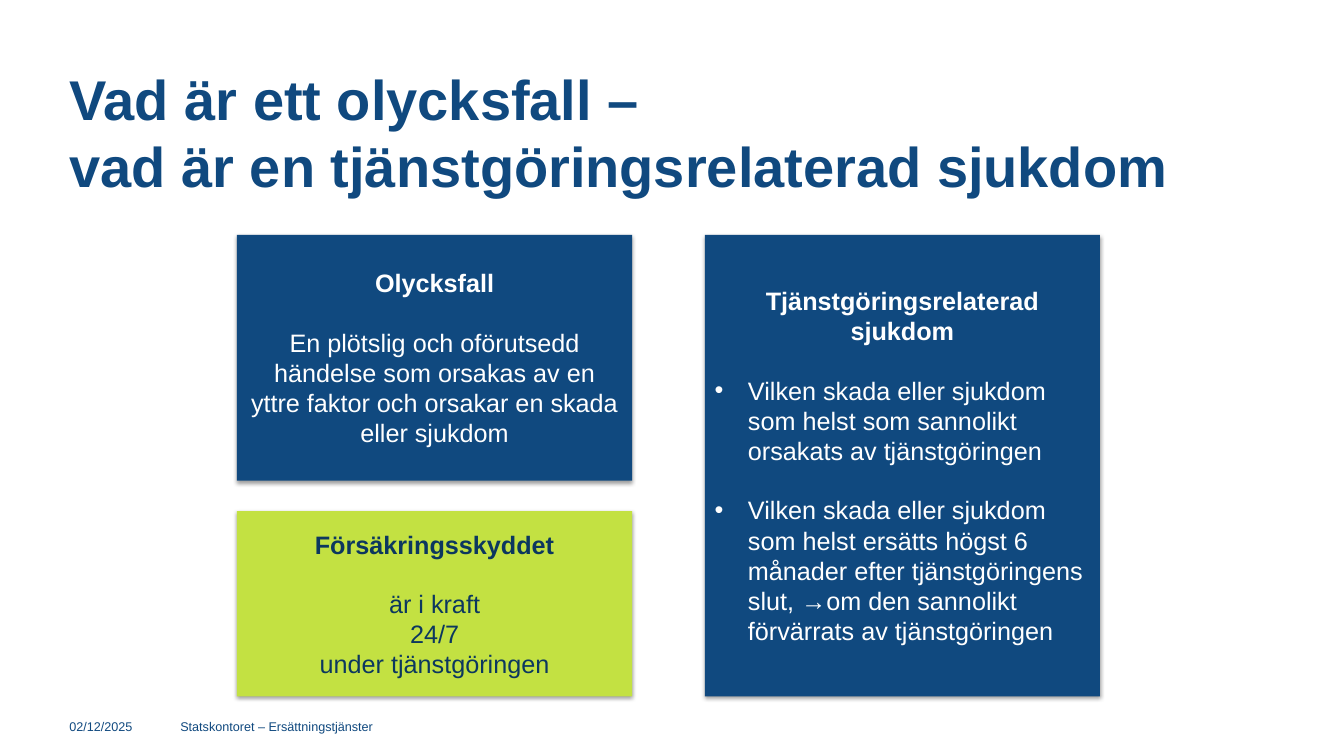
from lxml.etree import SubElement
from pptx import Presentation
from pptx.dml.color import RGBColor
from pptx.enum.shapes import MSO_SHAPE
from pptx.enum.text import MSO_ANCHOR, MSO_AUTO_SIZE, PP_ALIGN
from pptx.oxml.ns import qn
from pptx.util import Inches, Pt

BLUE = RGBColor(0x10, 0x49, 0x7F)
NAVY = RGBColor(0x0C, 0x37, 0x5F)
LIME = RGBColor(0xC3, 0xE1, 0x42)
WHITE = RGBColor(0xFF, 0xFF, 0xFF)

MARGIN = 0.59
CARD_LEFT, CARD_TOP = 2.35, 2.33
CARD_WIDTH, COLUMN_GAP = 3.92, 0.72
UPPER_HEIGHT, LOWER_HEIGHT, ROW_GAP = 2.44, 1.84, 0.3
FULL_HEIGHT = UPPER_HEIGHT + ROW_GAP + LOWER_HEIGHT
FOOTER_TOP, FOOTER_HEIGHT = 7.01, 0.39
CARD_TEXT_SIZE = 18
BLANK_LINE = Pt(20.7)


def format_paragraph(paragraph, size, color, bold=False, alignment=PP_ALIGN.LEFT):
    """Set the alignment and the font of every run in a paragraph."""
    paragraph.alignment = alignment
    for run in paragraph.runs:
        run.font.name = "Arial"
        run.font.size = Pt(size)
        run.font.bold = bold
        run.font.color.rgb = color


def add_bullet(paragraph):
    """Give a paragraph a round bullet with a hanging indent."""
    properties = paragraph._p.get_or_add_pPr()
    properties.set("marL", str(Inches(0.33)))
    properties.set("indent", str(-Inches(0.33)))
    SubElement(properties, qn("a:buFont"), typeface="Arial")
    SubElement(properties, qn("a:buChar"), char="•")


def add_soft_shadow(shape):
    """Put a short, translucent black shadow below a shape."""
    shape.shadow.inherit = False
    effects = shape._element.spPr.find(qn("a:effectLst"))
    shadow = SubElement(effects, qn("a:outerShdw"), blurRad=str(Pt(3.1)),
                        dist=str(Pt(1.6)), dir="5400000", rotWithShape="0")
    black = SubElement(shadow, qn("a:srgbClr"), val="000000")
    SubElement(black, qn("a:alpha"), val="38000")


def add_title(slide, box):
    """Place and format the two-line title."""
    title = slide.shapes.title
    title.left, title.top, title.width, title.height = map(Inches, box)
    frame = title.text_frame
    frame.text = "Vad är ett olycksfall –\vvad är en tjänstgöringsrelaterad sjukdom"
    frame.auto_size = MSO_AUTO_SIZE.NONE
    frame.vertical_anchor = MSO_ANCHOR.TOP
    format_paragraph(frame.paragraphs[0], 40, BLUE, bold=True)


def add_card(slide, box, fill, color, heading, body, bulleted=False):
    """Draw a filled card with a bold heading above its body paragraphs."""
    card = slide.shapes.add_shape(MSO_SHAPE.RECTANGLE, *map(Inches, box))
    card.fill.solid()
    card.fill.fore_color.rgb = fill
    card.line.fill.background()
    add_soft_shadow(card)
    frame = card.text_frame
    frame.word_wrap = True
    frame.vertical_anchor = MSO_ANCHOR.MIDDLE
    frame.text = heading
    format_paragraph(frame.paragraphs[0], CARD_TEXT_SIZE, color, True, PP_ALIGN.CENTER)
    for text in body:
        paragraph = frame.add_paragraph()
        paragraph.text = text
        paragraph.space_before = BLANK_LINE
        if bulleted:
            add_bullet(paragraph)
        alignment = PP_ALIGN.LEFT if bulleted else PP_ALIGN.CENTER
        format_paragraph(paragraph, CARD_TEXT_SIZE, color, alignment=alignment)


def add_cards(slide, left, top):
    """Lay out two stacked cards beside one full-height card."""
    add_card(slide, (left, top, CARD_WIDTH, UPPER_HEIGHT), BLUE, WHITE, "Olycksfall",
             ["En plötslig och oförutsedd händelse som orsakas av en yttre faktor "
              "och orsakar en skada eller sjukdom"])
    add_card(slide, (left + CARD_WIDTH + COLUMN_GAP, top, CARD_WIDTH, FULL_HEIGHT),
             BLUE, WHITE, "Tjänstgöringsrelaterad sjukdom",
             ["Vilken skada eller sjukdom som helst som sannolikt orsakats av tjänstgöringen",
              "Vilken skada eller sjukdom som helst ersätts högst 6 månader efter "
              "tjänstgöringens slut, →om den sannolikt förvärrats av tjänstgöringen"],
             bulleted=True)
    add_card(slide, (left, top + UPPER_HEIGHT + ROW_GAP, CARD_WIDTH, LOWER_HEIGHT),
             LIME, NAVY, "Försäkringsskyddet",
             ["är i kraft\v24/7\vunder tjänstgöringen"])


def add_footer(slide, top, height):
    """Write the date and the sender along the bottom edge."""
    for left, width, text in ((MARGIN, 1.06, "02/12/2025"),
                              (1.69, 7.83, "Statskontoret – Ersättningstjänster")):
        box = slide.shapes.add_textbox(*map(Inches, (left, top, width, height)))
        frame = box.text_frame
        frame.word_wrap = True
        frame.vertical_anchor = MSO_ANCHOR.MIDDLE
        frame.text = text
        format_paragraph(frame.paragraphs[0], 9, BLUE)


def main():
    """Build the slide and save the presentation."""
    presentation = Presentation()
    presentation.slide_width = Inches(13.33)
    presentation.slide_height = Inches(7.5)
    slide = presentation.slides.add_slide(presentation.slide_layouts.get_by_name("Title Only"))
    add_title(slide, (MARGIN, MARGIN, 12.13, 1.46))
    add_cards(slide, CARD_LEFT, CARD_TOP)
    add_footer(slide, FOOTER_TOP, FOOTER_HEIGHT)
    presentation.save("out.pptx")


if __name__ == "__main__":
    main()
